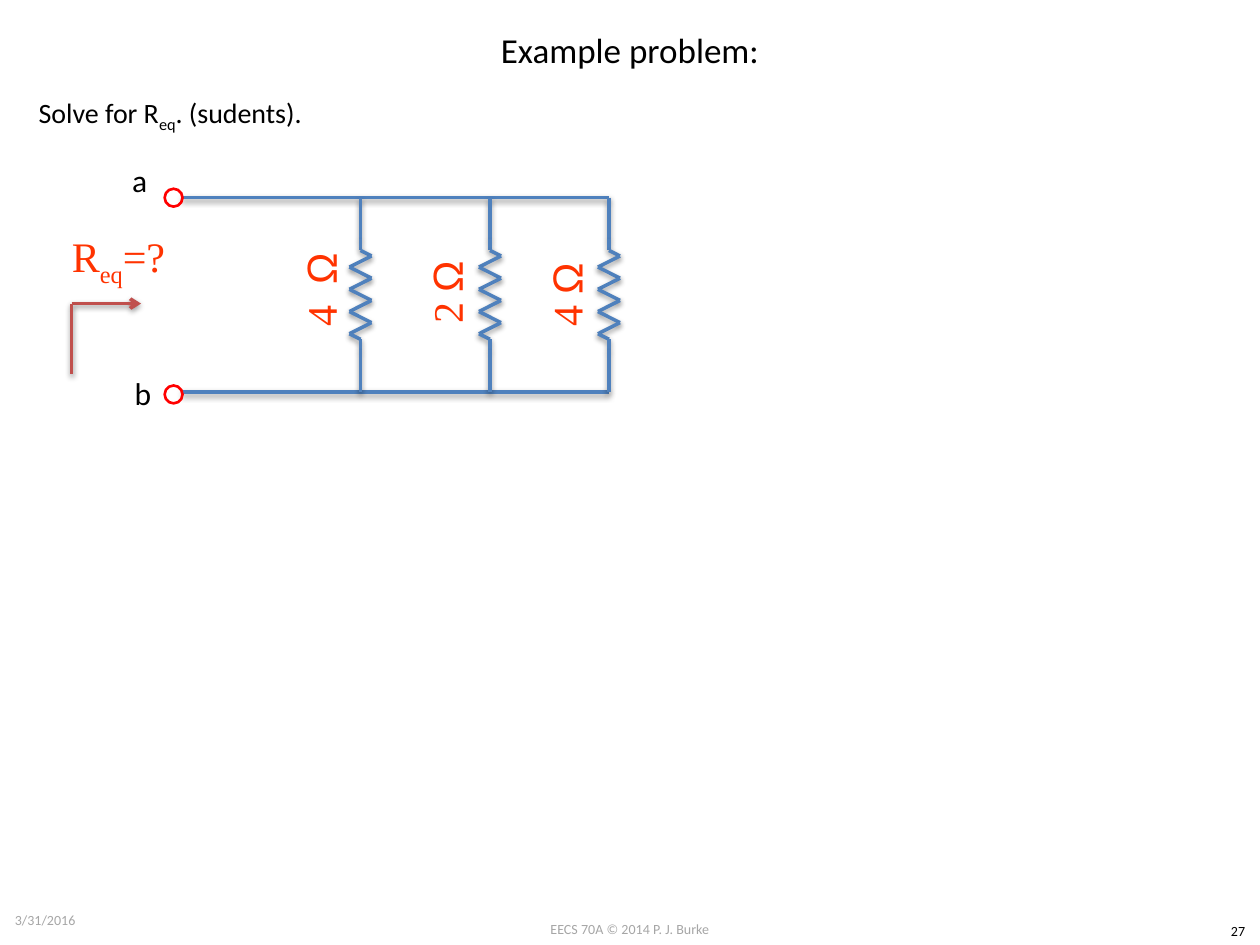
from dataclasses import dataclass
from itertools import pairwise

from lxml import etree
from pptx import Presentation
from pptx.dml import color
from pptx.enum import shapes, text
from pptx.oxml import ns
from pptx.util import Pt

BLUE, RED, BROWN = "4F81BD", "FF0000", "C0504D"
ORANGE, GREY, BLACK = "FF3300", "A6A6A6", "000000"
SERIF = "Times New Roman"
TOP, BOTTOM = 113, 224
MIDDLE = (TOP + BOTTOM) / 2
PITCH = 6.35
SWING = 6.3


@dataclass
class Run:
    text: str
    font: str | None = None
    sub: bool = False


@dataclass
class Resistor:
    x: float
    label: str
    label_left: float
    label_top: float


@dataclass
class Terminal:
    name: str
    name_left: float
    name_top: float
    y: float


RESISTORS = [
    Resistor(206, "4  ", 146.9, 146.9),
    Resistor(280, "2 ", 218.9, 148.3),
    Resistor(348, "4 ", 287.3, 149.8),
]
TERMINALS = [
    Terminal("a", 68.4, 88.6, 113),
    Terminal("b", 69.8, 210.2, 225.4),
]


def rgb(value: str) -> color.RGBColor:
    return color.RGBColor.from_string(value)


def write(sp, *runs: Run, size: float = 18, font: str = "Calibri",
          hue: str = BLACK, align=text.PP_ALIGN.LEFT,
          anchor=text.MSO_ANCHOR.TOP, wrap: bool = True) -> None:
    tf = sp.text_frame
    tf.word_wrap = wrap
    tf.vertical_anchor = anchor
    p = tf.paragraphs[0]
    p.alignment = align
    for run in runs:
        r = p.add_run()
        r.text = run.text
        r.font.size = Pt(size)
        r.font.name = run.font or font
        r.font.color.rgb = rgb(hue)
        if run.sub:
            r._r.get_or_add_rPr().set("baseline", "-25000")


def add_text(s, box: tuple, *runs: Run, turn: float = 0, **fmt) -> None:
    sp = s.shapes.add_textbox(*map(Pt, box))
    sp.rotation = turn
    write(sp, *runs, **fmt)


def add_line(parent, start: tuple, end: tuple, hue: str = BLUE, arrow: bool = False) -> None:
    c = parent.shapes.add_connector(
        shapes.MSO_CONNECTOR.STRAIGHT, *map(Pt, (*start, *end)))
    c.line.color.rgb = rgb(hue)
    c.line.width = Pt(2)
    if arrow:
        ln = c._element.spPr.find(ns.qn("a:ln"))
        etree.SubElement(ln, ns.qn("a:tailEnd"), type="arrow")


def add_resistor(s, resistor: Resistor) -> None:
    x = resistor.x
    zigzag = [(x + SWING * (-1) ** i, MIDDLE + (i - 3.5) * PITCH) for i in range(8)]
    points = [
        (x, TOP), (x, MIDDLE - 5 * PITCH), (x, MIDDLE - 4 * PITCH),
        *zigzag,
        (x, MIDDLE + 4 * PITCH), (x, MIDDLE + 5 * PITCH), (x, BOTTOM),
    ]
    group = s.shapes.add_group_shape()
    for start, end in pairwise(points):
        add_line(group, start, end)
    add_text(s, (resistor.label_left, resistor.label_top, 72, 37.4),
             Run(resistor.label), Run("Ω", font="Arial"), turn=270,
             size=24, font=SERIF, hue=ORANGE, align=text.PP_ALIGN.CENTER,
             anchor=text.MSO_ANCHOR.MIDDLE)


def add_terminal(s, terminal: Terminal) -> None:
    add_text(s, (terminal.name_left, terminal.name_top, 23.5, 29),
             Run(terminal.name), wrap=False)
    sp = s.shapes.add_shape(shapes.MSO_SHAPE.OVAL,
                            *map(Pt, (94.1, terminal.y - 5.1, 10.2, 10.2)))
    sp.shadow.inherit = False
    sp.fill.background()
    sp.line.color.rgb = rgb(RED)
    sp.line.width = Pt(1.5)


def add_port_arrow(s) -> None:
    corner = (41, 173.5)
    group = s.shapes.add_group_shape()
    add_line(group, corner, (80.6, 173.5), BROWN, arrow=True)
    add_line(group, (41, 213.8), corner, BROWN)
    add_text(s, (31.7, 129.6, 72, 37.4), Run("R"), Run("eq", sub=True), Run("=?"),
             size=24, font=SERIF, hue=ORANGE, align=text.PP_ALIGN.CENTER,
             anchor=text.MSO_ANCHOR.MIDDLE)


def add_footer(s) -> None:
    center = text.PP_ALIGN.CENTER
    add_text(s, (276, 522.7, 168, 17), Run("EECS 70A © 2014 P. J. Burke"),
             size=8, hue=GREY, align=center)
    add_text(s, (695, 523.4, 25, 17), Run("27"), size=8, align=center)
    add_text(s, (1.4, 511.2, 168, 28.8), Run("3/31/2016"), size=8, hue=GREY,
             anchor=text.MSO_ANCHOR.MIDDLE)


def main() -> None:
    prs = Presentation()
    prs.slide_width, prs.slide_height = Pt(720), Pt(540)
    s = prs.slides.add_slide(prs.slide_layouts[5])

    title = s.shapes.title
    title.left, title.top, title.width, title.height = map(Pt, (36, 0, 648, 56))
    write(title, Run("Example problem:"), size=20, align=text.PP_ALIGN.CENTER,
          anchor=text.MSO_ANCHOR.MIDDLE)
    add_text(s, (15, 51.2, 168, 26.6), Run("Solve for R"), Run("eq", sub=True),
             Run(". (sudents)."), size=16, wrap=False)

    for y in (TOP, BOTTOM):
        add_line(s, (RESISTORS[-1].x, y), (103.7, y))
    for resistor in RESISTORS:
        add_resistor(s, resistor)
    for terminal in TERMINALS:
        add_terminal(s, terminal)
    add_port_arrow(s)
    add_footer(s)
    prs.save("out.pptx")


if __name__ == "__main__":
    main()
